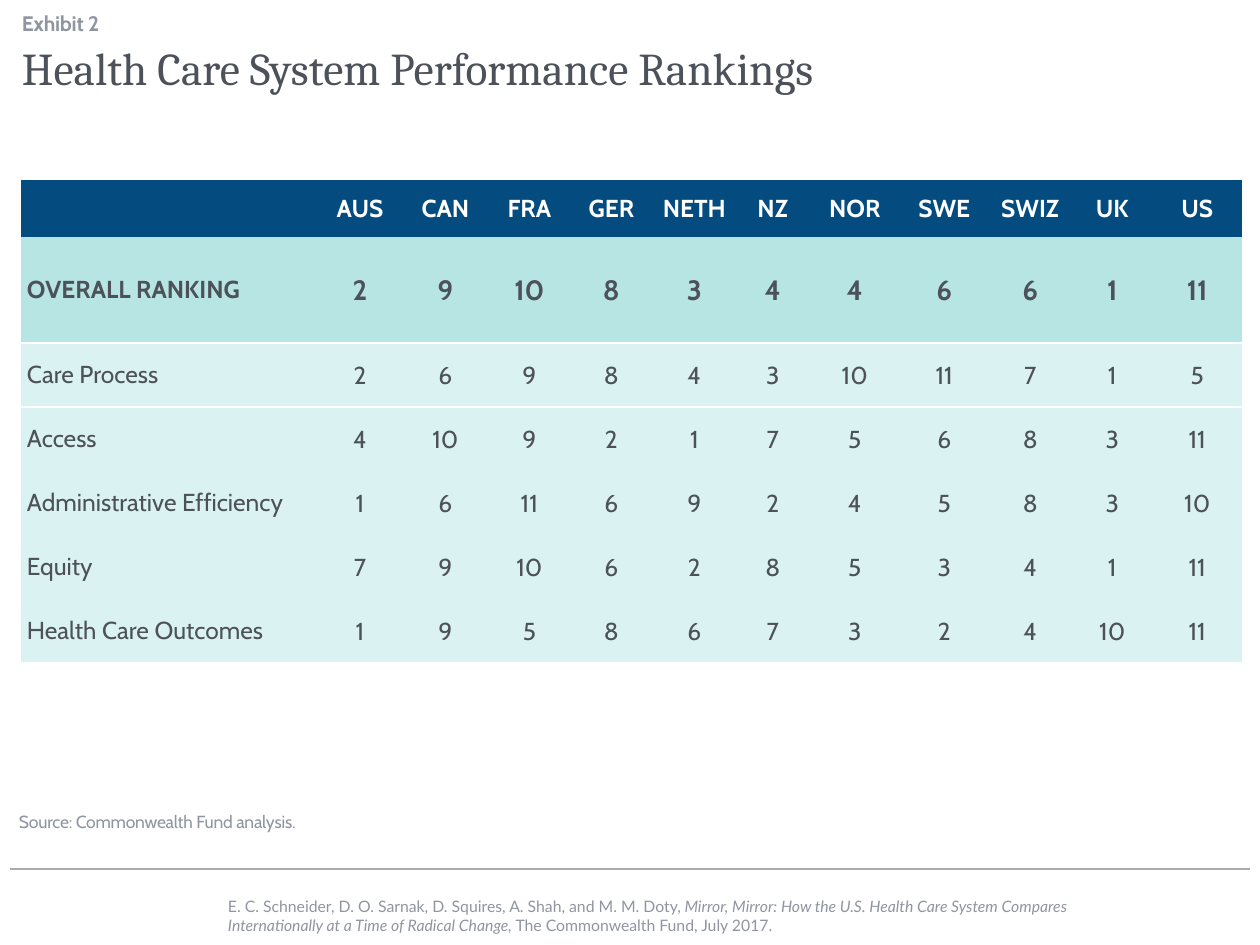
from lxml import etree
from pptx import Presentation
from pptx.dml.color import RGBColor
from pptx.enum.shapes import MSO_CONNECTOR
from pptx.enum.text import MSO_ANCHOR, MSO_AUTO_SIZE, PP_ALIGN
from pptx.oxml.ns import qn
from pptx.util import Emu, Pt

LEFT, CENTER = PP_ALIGN.LEFT, PP_ALIGN.CENTER
TOP, MIDDLE, BOTTOM = MSO_ANCHOR.TOP, MSO_ANCHOR.MIDDLE, MSO_ANCHOR.BOTTOM
NO_AUTOFIT = MSO_AUTO_SIZE.NONE
STRAIGHT = MSO_CONNECTOR.STRAIGHT
PLAIN_TABLE = "{2D5ABB26-0587-4C30-8999-92F81FD0307C}"

NAVY, TEAL, PALE = "044C7F", "B7E5E4", "DBF2F2"
INK, GRAY, RULE, WHITE = "4C515A", "8F95A1", "ABABAB", "FFFFFF"

COUNTRIES = ["AUS", "CAN", "FRA", "GER", "NETH", "NZ", "NOR", "SWE", "SWIZ", "UK", "US"]
RANKINGS = {
    "OVERALL RANKING": [2, 9, 10, 8, 3, 4, 4, 6, 6, 1, 11],
    "Care Process": [2, 6, 9, 8, 4, 3, 10, 11, 7, 1, 5],
    "Access": [4, 10, 9, 2, 1, 7, 5, 6, 8, 3, 11],
    "Administrative Efficiency": [1, 6, 11, 6, 9, 2, 4, 5, 8, 3, 10],
    "Equity": [7, 9, 10, 6, 2, 8, 5, 3, 4, 1, 11],
    "Health Care Outcomes": [1, 9, 5, 8, 6, 7, 3, 2, 4, 10, 11],
}
COLUMN_WIDTHS = [297, 84, 87, 81, 83, 83, 74, 90, 89, 83, 81, 89]
ROW_HEIGHTS = [57, 106] + [64] * 5


def px(length):
    return Emu(round(length * 914400 / 126))


def color(value):
    return RGBColor.from_string(value)


def text_format(name, size, ink, bold=False, italic=False):
    return {"name": name, "size": Pt(size), "bold": bold, "italic": italic, "ink": ink}


def set_attributes(target, values):
    for name, value in values.items():
        setattr(target, name, value)


class ExhibitSlide:
    def __init__(self, deck):
        self.page = deck.slides.add_slide(deck.slide_layouts[1])

    def add_span(self, para, text, style, tracking=0):
        """Add a run; tracking is in hundredths of a point."""
        span = para.add_run()
        span.text = text
        set_attributes(span.font, {k: v for k, v in style.items() if k != "ink"})
        span.font.color.rgb = color(style["ink"])
        if tracking:
            span.font._element.set("spc", str(tracking))

    def fill_box(self, box, area, spans, anchor=TOP, tracking=0):
        """Place a box without insets and put (text, format) spans in it."""
        set_attributes(box, dict(zip(("left", "top", "width", "height"), map(px, area))))
        frame = box.text_frame
        set_attributes(frame, {
            "margin_left": 0, "margin_right": 0, "margin_top": 0, "margin_bottom": 0,
            "word_wrap": True, "auto_size": NO_AUTOFIT, "vertical_anchor": anchor,
        })
        para = frame.paragraphs[0]
        set_attributes(para, {"alignment": LEFT, "space_before": Pt(0)})
        for text, style in spans:
            self.add_span(para, text, style, tracking)
        return para

    def title(self, area, text, style):
        self.fill_box(self.page.shapes.title, area, [(text, style)])

    def label(self, area, text, style):
        para = self.fill_box(self.page.placeholders[1], area, [(text, style)], tracking=-10)
        properties = para._p.get_or_add_pPr()
        properties.set("marL", "0")
        properties.set("indent", "0")
        etree.SubElement(properties, qn("a:buNone"))

    def text(self, area, spans, tracking=0):
        box = self.page.shapes.add_textbox(*map(px, area))
        self.fill_box(box, area, spans, BOTTOM, tracking)

    def rule(self, start, end, y):
        line = self.page.shapes.add_connector(STRAIGHT, px(start), px(y), px(end), px(y))
        line.line.color.rgb = color(RULE)
        line.line.width = Pt(0.75)
        etree.SubElement(line._element.spPr, qn("a:effectLst"))

    def border(self, cell, side):
        edge = etree.SubElement(cell._tc.get_or_add_tcPr(), qn(f"a:ln{side}"), w=str(Pt(1)))
        fill = etree.SubElement(edge, qn("a:solidFill"))
        etree.SubElement(fill, qn("a:srgbClr"), val=WHITE)

    def cell(self, cell, text, style, fill, is_number, inset, borders):
        set_attributes(cell, {
            "margin_left": px(inset), "margin_right": px(inset), "margin_top": px(inset),
            "margin_bottom": px(0 if inset == 1 else inset), "vertical_anchor": MIDDLE,
        })
        for side in borders:
            self.border(cell, side)
        cell.fill.solid()
        cell.fill.fore_color.rgb = color(fill)
        para = cell.text_frame.paragraphs[0]
        para.alignment = CENTER if is_number else LEFT
        if text:
            self.add_span(para, text, style)

    def table(self, left, top, widths, heights, rows):
        """Draw rows given as (texts, label format, value format, fill, value inset, borders)."""
        shape = self.page.shapes.add_table(
            len(heights), len(widths), px(left), px(top), px(sum(widths)), px(sum(heights)))
        table = shape.table
        table._tbl.tblPr.find(qn("a:tableStyleId")).text = PLAIN_TABLE
        set_attributes(table, {"first_row": False, "horz_banding": False})
        for column, width in zip(table.columns, widths):
            column.width = px(width)
        for row, height in zip(table.rows, heights):
            row.height = px(height)
        for r, (texts, label_style, value_style, fill, inset, borders) in enumerate(rows):
            for c, text in enumerate(texts):
                self.cell(table.cell(r, c), str(text), value_style if c else label_style,
                          fill, c > 0, inset if c else 6, borders)


def ranking_rows():
    header = text_format("Cabin", 14, WHITE, bold=True)
    overall_label = text_format("Cabin", 14, INK, bold=True)
    overall_value = text_format("Cabin", 16, INK, bold=True)
    plain = text_format("Cabin", 14, INK)
    rows = [(["", *COUNTRIES], header, header, NAVY, 6, "")]
    last = len(RANKINGS) - 1
    borders = {0: "B", 1: "T", last: "B"}
    for i, (measure, ranks) in enumerate(RANKINGS.items()):
        styles = (plain, plain, PALE) if i else (overall_label, overall_value, TEAL)
        rows.append(([measure, *ranks], *styles, 1, borders.get(i, "")))
    return rows


def main():
    deck = Presentation()
    deck.slide_width, deck.slide_height = px(1260), px(945)
    slide = ExhibitSlide(deck)

    citation = text_format("Lato", 9, GRAY)
    slide.text((228, 878, 932, 57), [
        ("E. C. Schneider, D. O. Sarnak, D. Squires, A. Shah, and M. M. Doty, ", citation),
        ("Mirror, Mirror: How the U.S. Health Care System Compares Internationally "
         "at a Time of Radical Change, ", {**citation, "italic": True}),
        ("The Commonwealth Fund, July 2017.", citation),
    ])
    slide.rule(1250, 10, 869)
    slide.table(21, 180, COLUMN_WIDTHS, ROW_HEIGHTS, ranking_rows())
    slide.label((22, 11, 236, 19), "Exhibit 2", text_format("Cabin", 12, GRAY, bold=True))
    slide.title((22, 40, 1218, 131), "Health Care System Performance Rankings",
                text_format("Cambria", 26, INK))
    slide.text((19, 756, 1228, 76), [
        ("Source: Commonwealth Fund analysis.", text_format("Cabin", 10, GRAY)),
    ], tracking=-10)
    deck.save("out.pptx")


if __name__ == "__main__":
    main()
